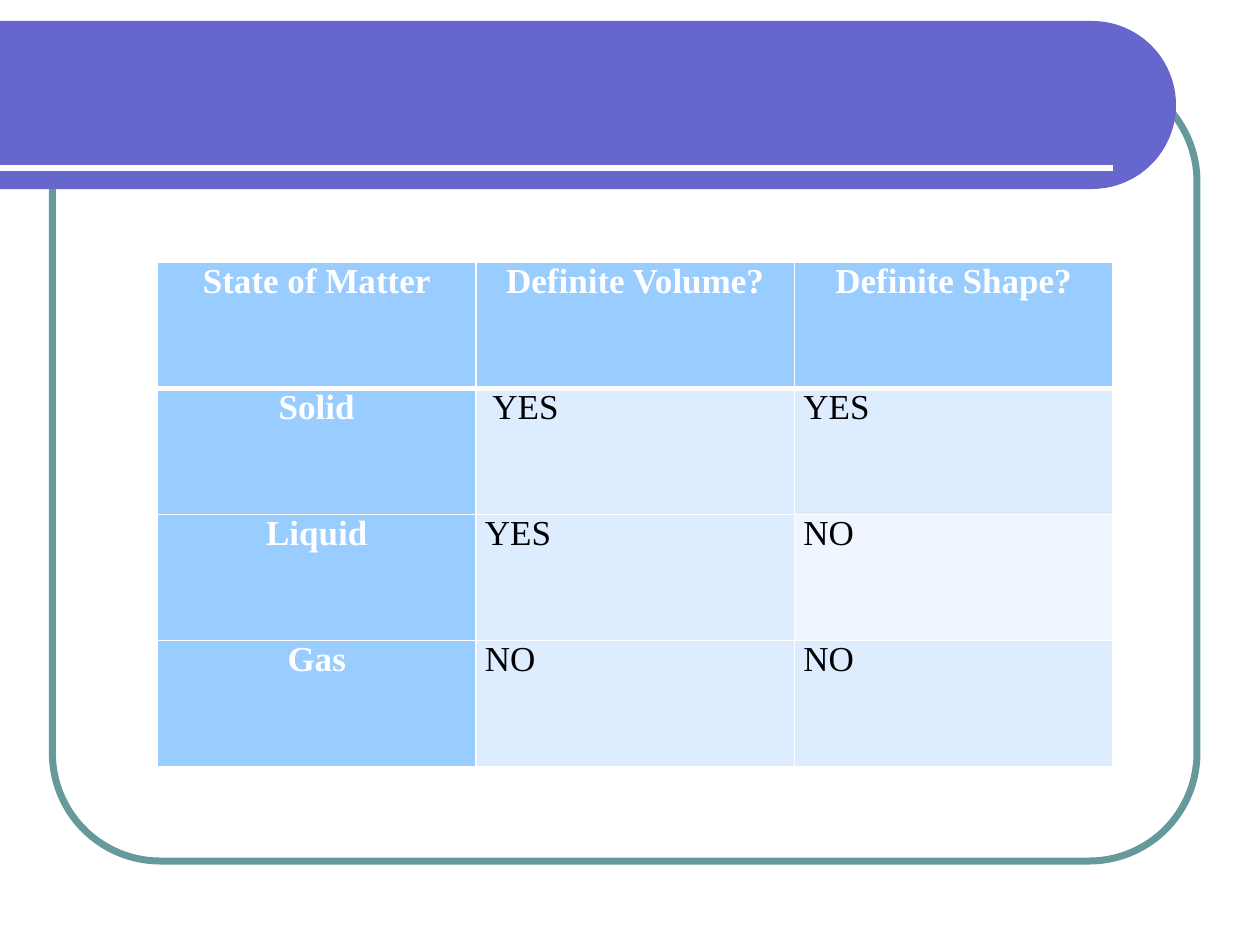
from math import cos, radians, sin

from lxml import etree
from pptx import Presentation
from pptx.dml.color import RGBColor
from pptx.enum.shapes import MSO_CONNECTOR, MSO_SHAPE
from pptx.enum.text import PP_ALIGN
from pptx.oxml.ns import qn
from pptx.util import Pt

ROUNDED = MSO_SHAPE.ROUNDED_RECTANGLE
STRAIGHT = MSO_CONNECTOR.STRAIGHT
LEFT, CENTER = PP_ALIGN.LEFT, PP_ALIGN.CENTER

WHITE = RGBColor(0xFF, 0xFF, 0xFF)
BLACK = RGBColor(0x00, 0x00, 0x00)
TEAL = RGBColor(0x66, 0x99, 0x99)
PURPLE = RGBColor(0x66, 0x66, 0xCC)
SKY = RGBColor(0x99, 0xCC, 0xFF)
PALE = RGBColor(0xDE, 0xEC, 0xFF)
PALEST = RGBColor(0xEF, 0xF6, 0xFF)

ROWS = [
    ["State of Matter", "Definite Volume?", "Definite Shape?"],
    ["Solid", " YES", "YES"],
    ["Liquid", "YES", "NO"],
    ["Gas", "NO", "NO"],
]


def write(tf, text, size=20, color=BLACK, bold=False, align=LEFT, font="Times New Roman"):
    p = tf.paragraphs[0]
    p.alignment = align
    r = p.add_run()
    r.text = text
    r.font.name = font
    r.font.size = Pt(size)
    r.font.bold = bold
    r.font.color.rgb = color


def set_borders(cell, color, **widths):
    """Give the cell's L, R, T and B edges their widths in points."""
    tc_pr = cell._tc.get_or_add_tcPr()
    for side in "LRTB":
        ln = etree.SubElement(tc_pr, qn(f"a:ln{side}"), w=str(Pt(widths.get(side, 1))))
        fill = etree.SubElement(ln, qn("a:solidFill"))
        etree.SubElement(fill, qn("a:srgbClr"), val=str(color))


class SlideBuilder:
    def __init__(self, slide):
        self.s = slide
        self.margin = Pt(5.14)

    def frame(self, x, y, w, h, color, weight, radius):
        sp = self.s.shapes.add_shape(ROUNDED, Pt(x), Pt(y), Pt(w), Pt(h))
        sp.adjustments[0] = radius
        sp.shadow.inherit = False
        sp.fill.background()
        sp.line.color.rgb = color
        sp.line.width = Pt(weight)

    def band(self, y, w, h, color):
        """Draw a band from the slide's left edge with a half-round right end."""
        radius = h / 2
        cx, cy = w - radius, y + radius
        arc = [(cx + radius * cos(radians(a)), cy + radius * sin(radians(a)))
               for a in range(-90, 91, 2)]
        fb = self.s.shapes.build_freeform(0, Pt(y))
        fb.add_line_segments([(Pt(px), Pt(py)) for px, py in arc + [(0, y + h)]])
        sp = fb.convert_to_shape()
        sp.shadow.inherit = False
        sp.fill.solid()
        sp.fill.fore_color.rgb = color
        sp.line.fill.background()

    def line(self, x1, y1, x2, y2, color, weight):
        cn = self.s.shapes.add_connector(STRAIGHT, Pt(x1), Pt(y1), Pt(x2), Pt(y2))
        cn.line.color.rgb = color
        cn.line.width = Pt(weight)
        etree.SubElement(cn._element.spPr, qn("a:effectLst"))

    def table(self, x, y, w, h, rows):
        shape = self.s.shapes.add_table(len(rows), len(rows[0]), Pt(x), Pt(y), Pt(w), Pt(h))
        tbl = shape.table
        for i, row in enumerate(rows):
            for j, text in enumerate(row):
                self.cell(tbl.cell(i, j), text, i, j)

    def cell(self, cell, text, i, j):
        heading = i == 0 or j == 0
        cell.margin_left = cell.margin_right = self.margin
        cell.margin_top = cell.margin_bottom = 0
        set_borders(cell, WHITE, T=3 if i == 1 else 1, B=3 if i == 0 else 1)
        cell.fill.solid()
        cell.fill.fore_color.rgb = SKY if heading else PALEST if (i, j) == (2, 2) else PALE
        write(cell.text_frame, text, color=WHITE if heading else BLACK,
              bold=heading, align=CENTER if heading else LEFT)


def main():
    prs = Presentation()
    prs.slide_width, prs.slide_height = Pt(720), Pt(540)
    b = SlideBuilder(prs.slides.add_slide(prs.slide_layouts[6]))
    b.frame(30, 42, 654, 450, TEAL, weight=4, radius=0.137)
    b.band(12, 672, 96, PURPLE)
    b.line(0, 96, 636, 96, WHITE, weight=3)
    b.table(90, 150, 546, 288, ROWS)
    prs.save("out.pptx")


if __name__ == "__main__":
    main()
